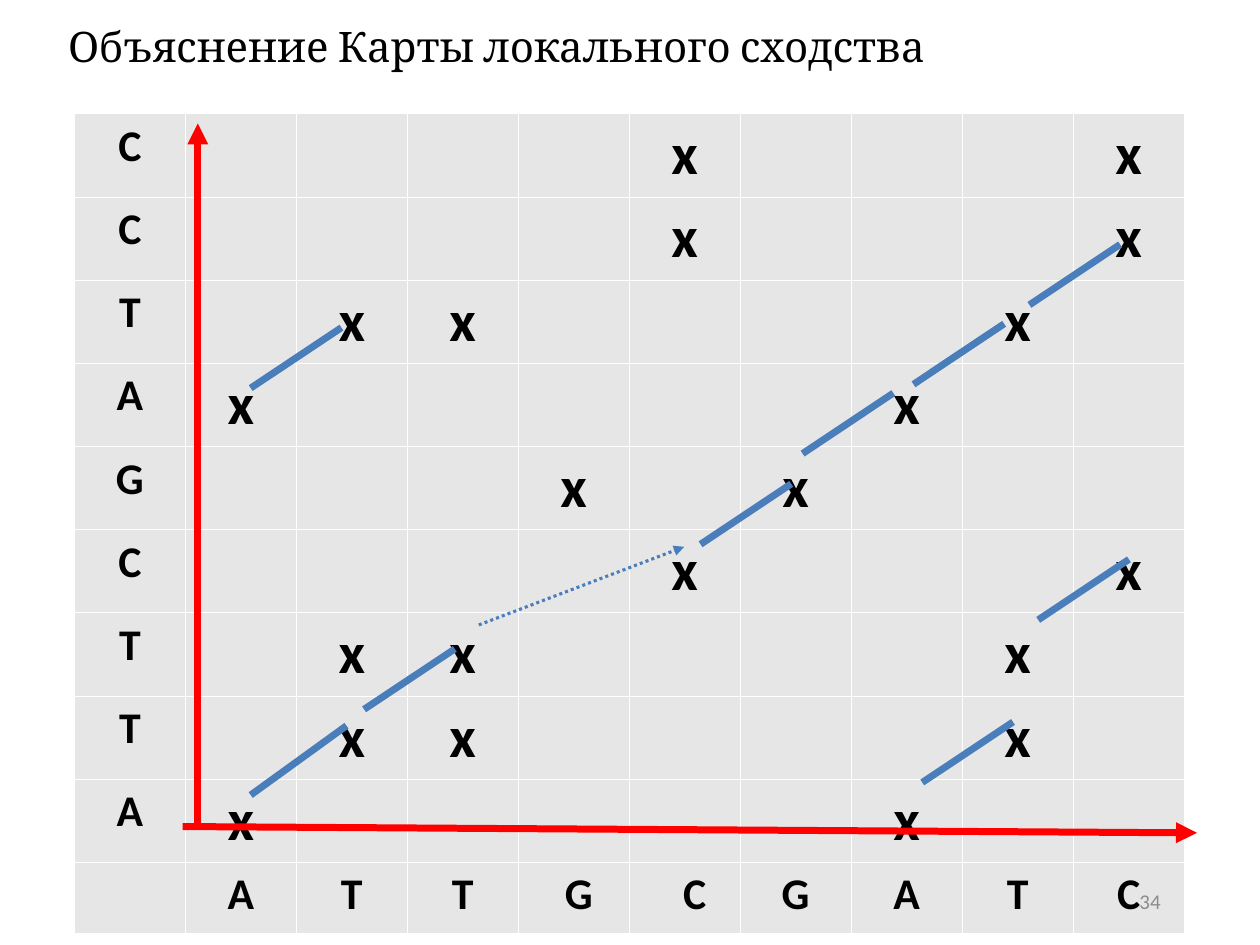
from dataclasses import dataclass

from lxml.etree import SubElement
from pptx import Presentation
from pptx.dml.color import RGBColor as RGB
from pptx.enum.dml import MSO_LINE_DASH_STYLE as DASH
from pptx.enum.shapes import MSO_CONNECTOR as CONN
from pptx.enum.text import MSO_ANCHOR as ANCHOR, PP_ALIGN as ALIGN
from pptx.oxml.ns import qn
from pptx.util import Inches, Pt


@dataclass(frozen=True)
class Theme:
    ink: RGB = RGB(0, 0, 0)
    cell: RGB = RGB(0xE6, 0xE6, 0xE6)
    diagonal: RGB = RGB(0x4A, 0x7E, 0xBB)
    axis: RGB = RGB(0xFF, 0, 0)
    muted: RGB = RGB(0x8C, 0x8C, 0x8C)
    border: str = "FFFFFF"
    border_width: float = 0.06
    title_font: str = "Cambria"
    body_font: str = "Calibri"
    title_size: float = 24
    letter_size: float = 25
    mark_size: float = 33
    number_size: float = 12
    thick: float = 4
    thin: float = 1.75


THEME = Theme()
ROW_SEQ = "CCTAGCTTA"  # top to bottom
COL_SEQ = "ATTGCGATC"  # left to right
ROW_HEIGHT, LAST_ROW_HEIGHT = 0.63, 0.56

# Offsets from the grid corner, in inches
STEP = (0.72, -0.48)
STEP_STARTS = [(2.30, 4.73), (4.97, 3.42), (5.78, 2.70), (6.66, 2.15),
               (7.58, 1.52), (1.40, 2.18), (6.73, 5.31), (7.65, 4.02)]
FIRST_STEP = ((1.40, 5.41), (2.16, 4.86))
JUMP = ((3.21, 4.06), (4.84, 3.44))
X_AXIS = ((0.86, 5.66), (8.91, 5.71))
Y_AXIS = ((0.98, 5.63), (0.98, 0.08))


def style_text(tf, text, size, font, color, bold=False, align=ALIGN.LEFT):
    tf.text = text
    p = tf.paragraphs[0]
    p.alignment = align
    f = p.runs[0].font
    f.size, f.name, f.bold = Pt(size), font, bold
    f.color.rgb = color


def style_cell(cell):
    """Thin borders first, then the fill, as the schema orders them."""
    tcPr = cell._tc.get_or_add_tcPr()
    for side in ("a:lnL", "a:lnR", "a:lnT", "a:lnB"):
        ln = SubElement(tcPr, qn(side), w=str(int(Pt(THEME.border_width))))
        fill = SubElement(ln, qn("a:solidFill"))
        SubElement(fill, qn("a:srgbClr"), val=THEME.border)
    cell.fill.solid()
    cell.fill.fore_color.rgb = THEME.cell


def add_line(slide, box, ends, color, width, arrow=False, dash=None):
    left, top = box[:2]
    (x1, y1), (x2, y2) = ends
    sp = slide.shapes.add_connector(
        CONN.STRAIGHT, Inches(left + x1), Inches(top + y1),
        Inches(left + x2), Inches(top + y2))
    sp.line.color.rgb = color
    sp.line.width = Pt(width)
    if dash:
        sp.line.dash_style = dash
    if arrow:
        SubElement(sp.line._get_or_add_ln(), qn("a:tailEnd"), type="triangle")
    SubElement(sp._element.spPr, qn("a:effectLst"))


def add_title(slide, box):
    sp = slide.shapes.title
    sp.left, sp.top, sp.width, sp.height = map(Inches, box)
    tf = sp.text_frame
    style_text(tf, "Объяснение Карты локального сходства",
               THEME.title_size, THEME.title_font, THEME.ink)
    tf.vertical_anchor = ANCHOR.MIDDLE
    tf.margin_top = tf.margin_bottom = Inches(0.04)
    tf.margin_left = tf.margin_right = Inches(0.09)


def add_grid(slide, box):
    rows, cols = len(ROW_SEQ) + 1, len(COL_SEQ) + 1
    table = slide.shapes.add_table(rows, cols, *map(Inches, box)).table
    table.first_row = table.horz_banding = False
    for col in table.columns:
        col.width = Inches(box[2] / cols)
    for row in table.rows:
        row.height = Inches(ROW_HEIGHT)
    table.rows[rows - 1].height = Inches(LAST_ROW_HEIGHT)
    for cell in table.iter_cells():
        style_cell(cell)

    def write(r, c, text, size):
        cell = table.cell(r, c)
        cell.margin_left = cell.margin_right = Inches(0.09)
        style_text(cell.text_frame, text, size, THEME.body_font, THEME.ink,
                   True, ALIGN.CENTER)

    # Sequence letters, and a mark wherever both sequences agree
    for r, row_letter in enumerate(ROW_SEQ):
        write(r, 0, row_letter, THEME.letter_size)
        for c, col_letter in enumerate(COL_SEQ, 1):
            if row_letter == col_letter:
                write(r, c, "x", THEME.mark_size)
    for c, letter in enumerate(COL_SEQ, 1):
        write(rows - 1, c, letter, THEME.letter_size)

    # Two bottom letters stand slightly right of centre
    table.cell(rows - 1, 4).margin_left = Inches(0.17)
    table.cell(rows - 1, 5).margin_left = Inches(0.25)


def add_diagonals(slide, box):
    steps = [((x, y), (x + STEP[0], y + STEP[1])) for x, y in STEP_STARTS]
    for ends in [FIRST_STEP] + steps:
        add_line(slide, box, ends, THEME.diagonal, THEME.thick)
    add_line(slide, box, JUMP, THEME.diagonal, THEME.thin, True,
             DASH.ROUND_DOT)


def add_axes(slide, box):
    for ends in (X_AXIS, Y_AXIS):
        add_line(slide, box, ends, THEME.axis, THEME.thick, True)


def add_page_number(slide, box):
    tf = slide.shapes.add_textbox(*map(Inches, box)).text_frame
    tf.word_wrap = True
    tf.vertical_anchor = ANCHOR.MIDDLE
    style_text(tf, "34", THEME.number_size, THEME.body_font, THEME.muted,
               align=ALIGN.RIGHT)


def main():
    prs = Presentation()
    prs.slide_width, prs.slide_height = Inches(10), Inches(7.5)
    slide = prs.slides.add_slide(prs.slide_layouts[5])
    grid = (0.59, 0.9, 8.81, 6.23)
    add_title(slide, (0.45, 0.14, 8.99, 0.44))
    add_grid(slide, grid)
    add_diagonals(slide, grid)
    add_axes(slide, grid)
    add_page_number(slide, (7.06, 6.95, 2.25, 0.4))
    prs.save("out.pptx")


if __name__ == "__main__":
    main()
